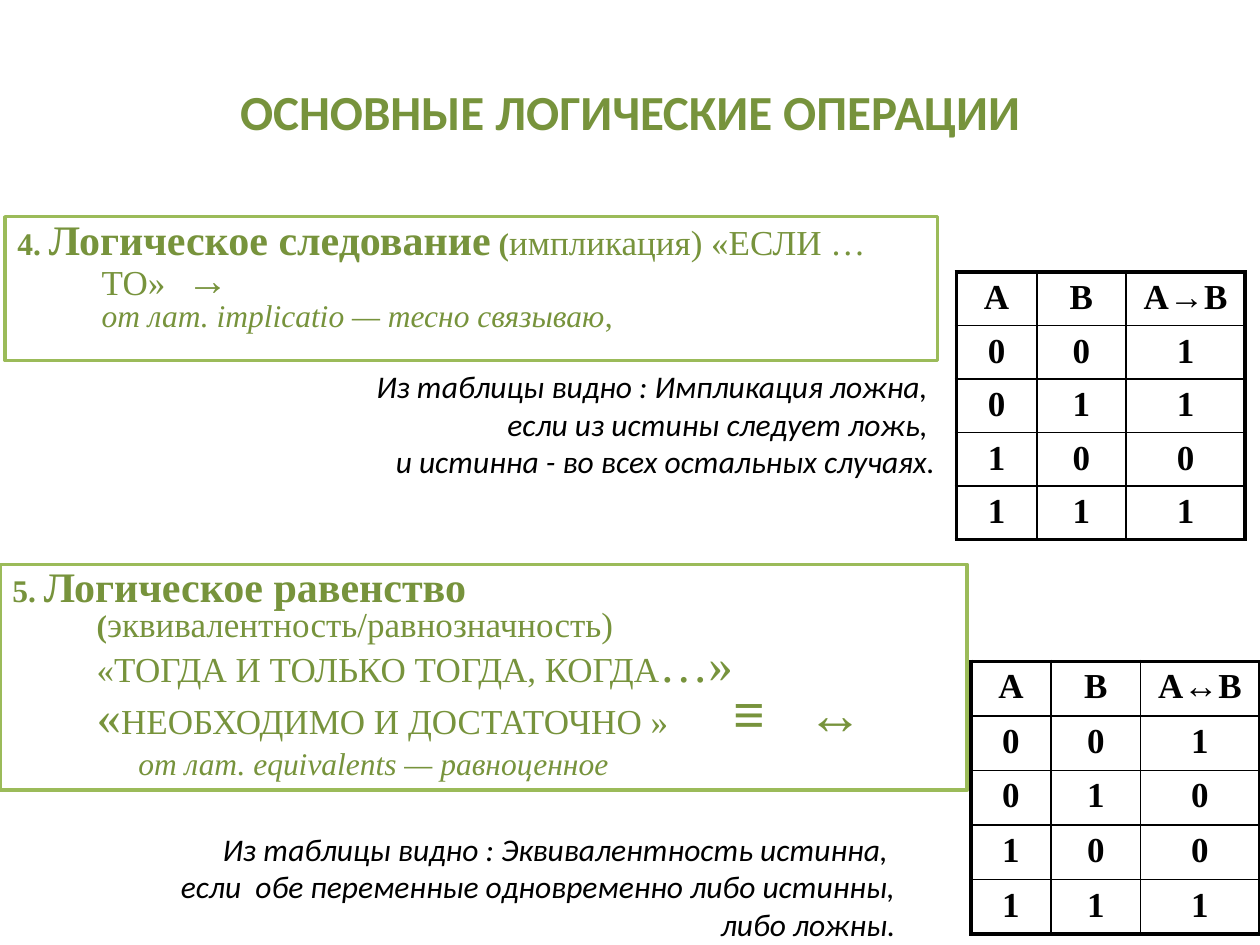
from dataclasses import dataclass

from lxml import etree
from pptx import Presentation
from pptx.dml.color import RGBColor
from pptx.enum.shapes import MSO_SHAPE
from pptx.enum.text import MSO_ANCHOR, PP_ALIGN
from pptx.oxml.ns import qn
from pptx.util import Cm, Pt

RECT = MSO_SHAPE.RECTANGLE
TOP, MIDDLE = MSO_ANCHOR.TOP, MSO_ANCHOR.MIDDLE
LEFT, CENTER, RIGHT = PP_ALIGN.LEFT, PP_ALIGN.CENTER, PP_ALIGN.RIGHT
SERIF, SANS = "Times New Roman", "Calibri"
GREEN, EDGE, BLACK, WHITE = "77933C", "9BBB59", "000000", "FFFFFF"
THIN, THICK = 1, 2.25
COLS = 1.62, 1.8, 2.4


@dataclass
class Run:
    text: str
    size: float
    bold: bool = False
    italic: bool = False
    gap: float = 0


@dataclass
class Para:
    runs: list[Run]
    indent: float = 1.7
    hang: float = 1.7
    before: float = 0


@dataclass
class Box:
    x: float
    y: float
    w: float
    h: float
    paras: list[Para]


@dataclass
class Note:
    x: float
    y: float
    w: float
    h: float
    text: str
    size: float
    color: str = BLACK
    bold: bool = False
    italic: bool = False
    align: PP_ALIGN = RIGHT
    anchor: MSO_ANCHOR = TOP


@dataclass
class Truth:
    x: float
    y: float
    row: float
    sign: str
    values: str


def rgb(code: str) -> RGBColor:
    return RGBColor.from_string(code)


def style(font, name: str, size: float, color: str, bold=False, italic=False):
    font.name, font.size = name, Pt(size)
    font.bold, font.italic = bold, italic
    font.color.rgb = rgb(color)


def add_run(para, run: Run):
    """Add a run; a newline is a line break, and gap widens its spacing."""
    if run.text == "\n":
        para.add_line_break()
        return
    part = para.add_run()
    part.text = run.text
    style(part.font, SERIF, run.size, GREEN, run.bold, run.italic)
    if run.gap:
        part._r.get_or_add_rPr().set("spc", str(int(run.gap * 100)))


def add_box(slide, box: Box):
    shape = slide.shapes.add_shape(RECT, Cm(box.x), Cm(box.y), Cm(box.w), Cm(box.h))
    shape.shadow.inherit = False
    shape.fill.solid()
    shape.fill.fore_color.rgb = rgb(WHITE)
    shape.line.color.rgb = rgb(EDGE)
    shape.line.width = Pt(2)
    frame = shape.text_frame
    frame.word_wrap, frame.vertical_anchor = True, TOP
    for i, item in enumerate(box.paras):
        para = frame.add_paragraph() if i else frame.paragraphs[0]
        para.alignment, para.line_spacing = LEFT, 0.8
        para.space_before = Pt(item.before)
        props = para._p.get_or_add_pPr()
        props.set("marL", str(Cm(item.indent)))
        props.set("indent", str(-Cm(item.hang)))
        for run in item.runs:
            add_run(para, run)


def add_note(slide, note: Note):
    shape = slide.shapes.add_textbox(Cm(note.x), Cm(note.y), Cm(note.w), Cm(note.h))
    frame = shape.text_frame
    frame.word_wrap, frame.vertical_anchor = True, note.anchor
    para = frame.paragraphs[0]
    para.text, para.alignment = note.text, note.align
    style(para.font, SANS, note.size, note.color, note.bold, note.italic)


def add_edges(cell, widths: dict[str, float]):
    """Draw cell borders; widths go in the order L, R, T, B."""
    props = cell._tc.get_or_add_tcPr()
    for i, (side, width) in enumerate(widths.items()):
        line = etree.Element(qn(f"a:ln{side}"), w=str(Pt(width)))
        fill = etree.SubElement(line, qn("a:solidFill"))
        etree.SubElement(fill, qn("a:srgbClr"), val=BLACK)
        props.insert(i, line)


def add_truth(slide, truth: Truth):
    rows = [["А", "В", f"А{truth.sign}В"]]
    rows += [[*f"{n:02b}", value] for n, value in enumerate(truth.values)]
    last, end = len(rows) - 1, len(COLS) - 1
    table = slide.shapes.add_table(
        len(rows), len(COLS), Cm(truth.x), Cm(truth.y),
        Cm(sum(COLS)), Cm(truth.row * len(rows))).table
    table.first_row = table.horz_banding = False
    for col, width in zip(table.columns, COLS):
        col.width = Cm(width)
    for r, row in enumerate(rows):
        table.rows[r].height = Cm(truth.row)
        for c, text in enumerate(row):
            cell = table.cell(r, c)
            cell.fill.background()
            para = cell.text_frame.paragraphs[0]
            para.text, para.alignment = text, CENTER
            style(para.font, SERIF, 20, BLACK, bold=True)
            outer = {"L": c == 0, "R": c == end, "T": r == 0, "B": r == last}
            add_edges(cell, {s: THICK if o else THIN for s, o in outer.items()})


BOXES = [
    Box(0.1, 4.37, 18.8, 2.9, [Para([
        Run("4. ", 18, bold=True),
        Run("Логическое следование", 24, bold=True),
        Run(" ", 18),
        Run("(", 18, bold=True),
        Run("импликация) «ЕСЛИ … ТО»", 20),
        Run(" ", 24, gap=6),
        Run("→", 24),
        Run("\n", 24),
        Run("от лат. implicatio — тесно связываю", 18, italic=True),
        Run(",", 18)])]),
    Box(0, 11.38, 19.5, 4.55, [
        Para([
            Run("5. ", 18, bold=True),
            Run("Логическое равенство", 24, bold=True),
            Run(" ", 18),
            Run("(", 18, bold=True),
            Run("эквивалентность/равнозначность)", 20),
            Run("\n", 18),
            Run("«ТОГДА И ТОЛЬКО ТОГДА, КОГДА", 20),
            Run("…» «", 28),
            Run("НЕОБХОДИМО И ДОСТАТОЧНО »", 20),
            Run(" ", 32, gap=29),
            Run("≡", 32, bold=True),
            Run(" ", 32, gap=16),
            Run("↔", 32, bold=True)]),
        Para([Run("от лат. equivalents — равноценное", 18, italic=True)],
             3.84, 1.3, 3.6)]),
]
NOTES = [
    Note(5.1, 7.27, 14, 2.56, "Из таблицы видно : Импликация ложна, \v"
         "если из истины следует ложь, \v"
         "и истинна - во всех остальных случаях.", 18, italic=True),
    Note(1.1, 16.6, 17.2, 2.56, "Из таблицы видно : Эквивалентность истинна, \v"
         "если  обе переменные одновременно либо истинны,\v"
         "либо ложны.", 18, italic=True),
    Note(1.27, 1.32, 22.86, 1.85, "ОСНОВНЫЕ ЛОГИЧЕСКИЕ ОПЕРАЦИИ", 28, GREEN,
         bold=True, align=CENTER, anchor=MIDDLE),
]
TRUTHS = [
    Truth(19.28, 5.48, 1.08, "→", "1101"),
    Truth(19.57, 13.33, 1.1, "↔", "1001"),
]


def main():
    deck = Presentation()
    deck.slide_width, deck.slide_height = Cm(25.4), Cm(19.05)
    slide = deck.slides.add_slide(deck.slide_layouts[6])
    for box in BOXES:
        add_box(slide, box)
    for truth in TRUTHS:
        add_truth(slide, truth)
    for note in NOTES:
        add_note(slide, note)
    deck.save("out.pptx")


if __name__ == "__main__":
    main()
